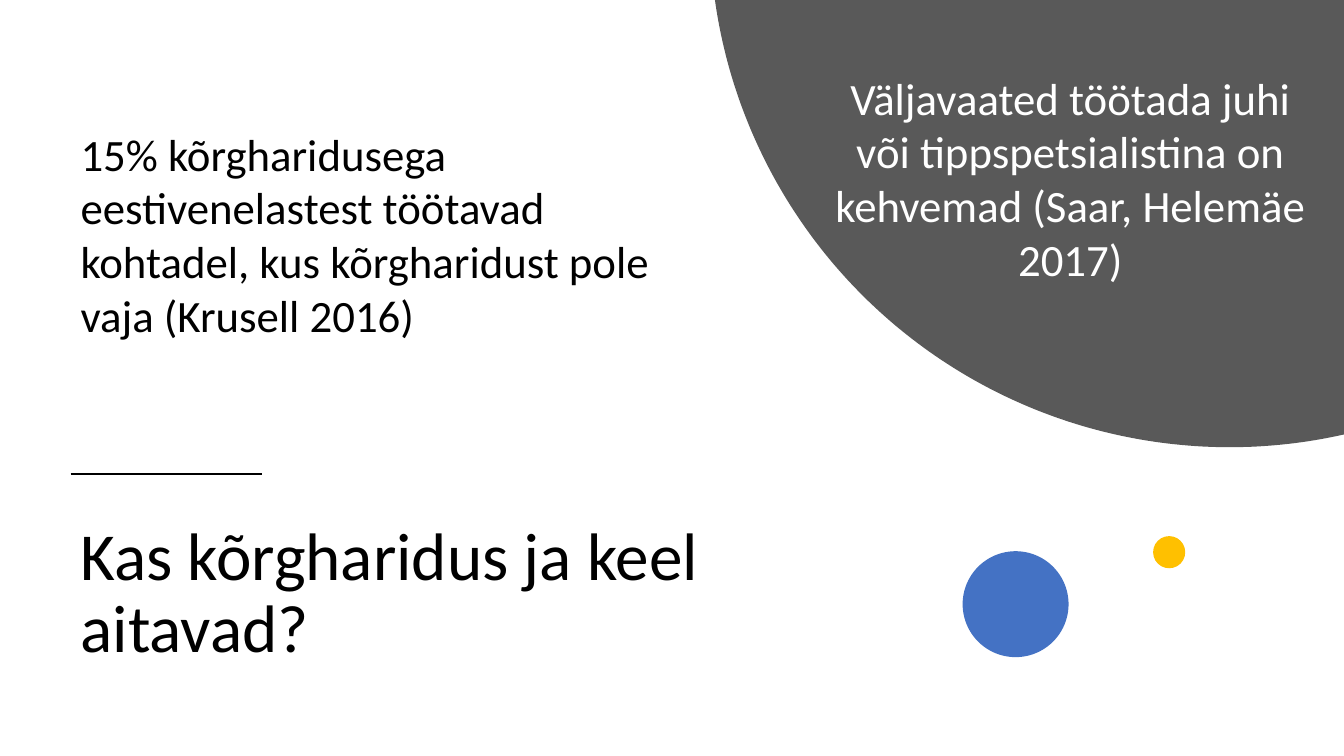
import math

from lxml import etree
from pptx import Presentation
from pptx.dml.color import RGBColor
from pptx.enum.shapes import MSO_CONNECTOR, MSO_SHAPE
from pptx.enum.text import MSO_ANCHOR, PP_ALIGN
from pptx.oxml.ns import qn
from pptx.util import Cm, Pt

BLACK = RGBColor(0x00, 0x00, 0x00)
WHITE = RGBColor(0xFF, 0xFF, 0xFF)
GRAY = RGBColor(0x59, 0x59, 0x59)
BLUE = RGBColor(0x44, 0x72, 0xC4)
GOLD = RGBColor(0xFF, 0xC0, 0x00)
OVAL = MSO_SHAPE.OVAL
STRAIGHT = MSO_CONNECTOR.STRAIGHT
TOP, MIDDLE = MSO_ANCHOR.TOP, MSO_ANCHOR.MIDDLE
LEFT, CENTER = PP_ALIGN.LEFT, PP_ALIGN.CENTER

SLIDE_WIDTH, SLIDE_HEIGHT = 33.87, 19.05
MARGIN = 1.78
ARC_X, ARC_Y, ARC_RADIUS = 30.99, -1.83, 13.1
ARC_STEPS = 120


def paint(shape, color):
    shape.fill.solid()
    shape.fill.fore_color.rgb = color
    shape.line.fill.background()
    shape.shadow.inherit = False


def add_text(text, left, top, width, height, size, color, anchor, alignment, spacing):
    box = slide.shapes.add_textbox(Cm(left), Cm(top), Cm(width), Cm(height))
    frame = box.text_frame
    frame.word_wrap = True
    frame.vertical_anchor = anchor
    frame.text = text
    paragraph = frame.paragraphs[0]
    paragraph.alignment = alignment
    paragraph.line_spacing = spacing
    font = paragraph.runs[0].font
    font.name = "Calibri"
    font.size = Pt(size)
    font.color.rgb = color
    return box


presentation = Presentation()
presentation.slide_width = Cm(SLIDE_WIDTH)
presentation.slide_height = Cm(SLIDE_HEIGHT)
slide = presentation.slides.add_slide(presentation.slide_layouts[6])

divider = slide.shapes.add_connector(
    STRAIGHT, Cm(MARGIN), Cm(11.94), Cm(6.6), Cm(11.94)
)
divider.line.color.rgb = BLACK
divider.line.width = Pt(1.5)
etree.SubElement(divider._element.spPr, qn("a:effectLst"))

for left, top, diameter, color in [
    (24.26, 13.89, 2.67, BLUE),
    (29.06, 13.51, 0.81, GOLD),
]:
    dot = slide.shapes.add_shape(OVAL, Cm(left), Cm(top), Cm(diameter), Cm(diameter))
    paint(dot, color)

first_angle = math.acos((SLIDE_WIDTH - ARC_X) / ARC_RADIUS)
last_angle = math.pi - math.asin(-ARC_Y / ARC_RADIUS)
arc_points = []
for step in range(ARC_STEPS + 1):
    angle = first_angle + (last_angle - first_angle) * step / ARC_STEPS
    x = ARC_X + ARC_RADIUS * math.cos(angle)
    y = ARC_Y + ARC_RADIUS * math.sin(angle)
    arc_points.append((Cm(x), Cm(y)))
builder = slide.shapes.build_freeform(Cm(SLIDE_WIDTH), Cm(0))
builder.add_line_segments(arc_points, close=True)
paint(builder.convert_to_shape(), GRAY)

add_text(
    "Kas kõrgharidus ja keel aitavad?",
    MARGIN, 12.57, 20.57, 4.83, 48, BLACK, MIDDLE, LEFT, 0.9,
)
body = add_text(
    "15% kõrgharidusega eestivenelastest töötavad kohtadel, "
    "kus kõrgharidust pole vaja (Krusell 2016)",
    MARGIN, 1.65, 15.77, 9.63, 32, BLACK, MIDDLE, LEFT, 1.0,
)
body.text_frame.margin_bottom = Cm(1.27)
add_text(
    "Väljavaated töötada juhi või tippspetsialistina on kehvemad (Saar, Helemäe 2017)",
    20.6, 1.65, 12.75, 5.74, 32, WHITE, TOP, CENTER, 1.0,
)

presentation.save("out.pptx")
